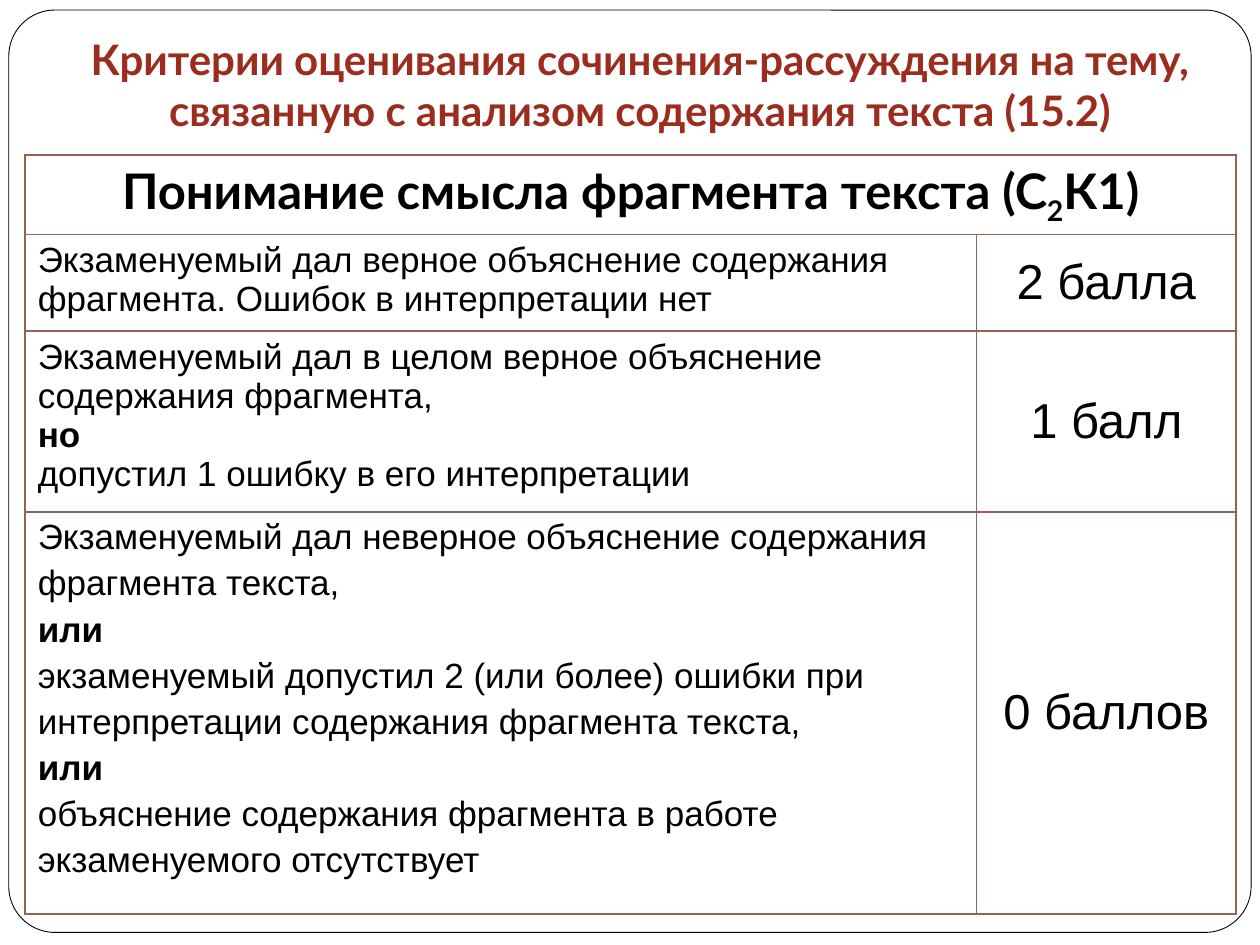
from lxml.etree import SubElement
from pptx import Presentation
from pptx.dml.color import RGBColor
from pptx.enum.shapes import MSO_SHAPE
from pptx.enum.text import MSO_ANCHOR, PP_ALIGN
from pptx.oxml.ns import qn
from pptx.util import Inches, Pt

BLACK = RGBColor(0, 0, 0)
WHITE = RGBColor(255, 255, 255)
RED = RGBColor(0x9B, 0x2D, 0x1F)
BROWN = RGBColor(0x95, 0x62, 0x51)

TITLE = ("Критерии оценивания сочинения-рассуждения на тему, \n"
         "связанную с анализом содержания текста (15.2) ")
HEADING = ("Понимание смысла фрагмента текста (С", "2", "К1)")
LINKS = ("но", "или")
COLS = (7.55, 2.06)
ROWS = (0.63, 0.76, 1.41, 3.19)
MARKS = (
    (["Экзаменуемый дал верное объяснение содержания фрагмента. "
      "Ошибок в интерпретации нет"], "2 балла"),
    (["Экзаменуемый дал в целом верное объяснение содержания фрагмента, \n"
      "но \nдопустил 1 ошибку в его интерпретации"], "1 балл"),
    (["Экзаменуемый дал неверное объяснение содержания",
      "фрагмента текста,",
      "или",
      "экзаменуемый допустил 2 (или более) ошибки при",
      "интерпретации содержания фрагмента текста,",
      "или",
      "объяснение содержания фрагмента в работе",
      "экзаменуемого отсутствует"], "0 баллов"),
)


def style(para, size, name="Arial", color=BLACK, bold=False, align=PP_ALIGN.LEFT):
    para.alignment = align
    font = para.font
    font.size, font.name, font.bold = Pt(size), name, bold
    font.color.rgb = color


def add_frame(slide):
    frame = slide.shapes.add_shape(MSO_SHAPE.ROUNDED_RECTANGLE, Inches(0.07),
                                   Inches(0.08), Inches(9.86), Inches(7.32))
    frame.adjustments[0] = 0.05
    frame.shadow.inherit = False
    frame.fill.solid()
    frame.fill.fore_color.rgb = WHITE
    frame.line.color.rgb = BLACK
    frame.line.width = Pt(0.5)


def add_title(slide):
    box = slide.shapes.add_textbox(Inches(0.12), Inches(0.22), Inches(10), Inches(1.25))
    box.text_frame.word_wrap = True
    para = box.text_frame.paragraphs[0]
    para.text = TITLE.replace("\n", "\v")
    style(para, 24, "Lato", RED, True, PP_ALIGN.CENTER)


def set_edges(cell):
    props = cell._tc.get_or_add_tcPr()
    for index, side in enumerate(("lnL", "lnR", "lnT", "lnB")):
        edge = props.makeelement(qn(f"a:{side}"), {"w": str(Pt(1))})
        props.insert(index, edge)
        fill = SubElement(edge, qn("a:solidFill"))
        SubElement(fill, qn("a:srgbClr"), val=str(BROWN))


def fill_cell(cell, texts, size, align=PP_ALIGN.LEFT):
    frame = cell.text_frame
    for index, text in enumerate(texts):
        para = frame.add_paragraph() if index else frame.paragraphs[0]
        style(para, size, align=align)
        para.space_before = Pt(size * 0.2)
        for number, line in enumerate(text.split("\n")):
            if number:
                para.add_line_break()
            run = para.add_run()
            run.text = line
            if line.strip() in LINKS:
                run.font.bold = True


def fill_head(cell):
    para = cell.text_frame.paragraphs[0]
    style(para, 28, "Lato", bold=True, align=PP_ALIGN.CENTER)
    for text in HEADING:
        para.add_run().text = text
    para.runs[1].font._element.set("baseline", "-25000")


def add_marks(slide):
    table = slide.shapes.add_table(len(ROWS), len(COLS), Inches(0.2), Inches(1.23),
                                   Inches(sum(COLS)), Inches(sum(ROWS))).table
    table.first_row = table.horz_banding = False
    for col, width in zip(table.columns, COLS):
        col.width = Inches(width)
    for row, height in zip(table.rows, ROWS):
        row.height = Inches(height)
    for cell in table.iter_cells():
        cell.fill.background()
        set_edges(cell)
    table.cell(0, 0).merge(table.cell(0, 1))
    fill_head(table.cell(0, 0))
    for index, (texts, mark) in enumerate(MARKS, 1):
        fill_cell(table.cell(index, 0), texts, 20)
        score = table.cell(index, 1)
        score.vertical_anchor = MSO_ANCHOR.MIDDLE
        fill_cell(score, [mark], 28, PP_ALIGN.CENTER)


def main():
    """Build the slide of essay marking criteria."""
    deck = Presentation()
    deck.slide_width, deck.slide_height = Inches(10), Inches(7.5)
    slide = deck.slides.add_slide(deck.slide_layouts[6])
    add_frame(slide)
    add_title(slide)
    add_marks(slide)
    deck.save("out.pptx")


if __name__ == "__main__":
    main()
